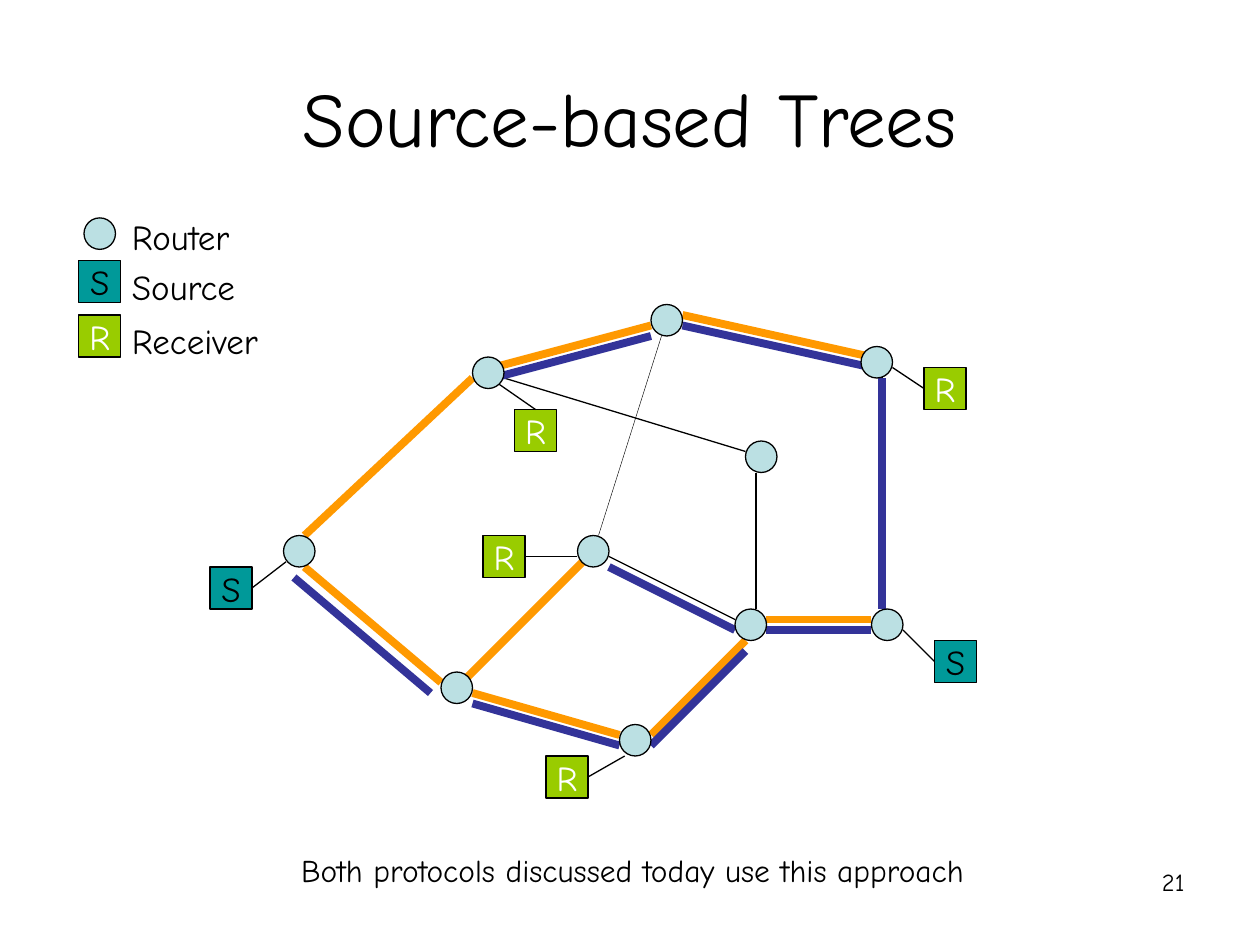
"""Build the Source-based Trees slide with its router network and legend."""
from pptx import Presentation
from pptx.dml.color import RGBColor
from pptx.enum.shapes import MSO_CONNECTOR as Link, MSO_SHAPE as Shape
from pptx.enum.text import MSO_ANCHOR as Anchor, MSO_AUTO_SIZE as AutoSize, PP_ALIGN as Align
from pptx.oxml.ns import qn
from pptx.util import Cm, Pt

FONT = "Comic Neue"
COLORS = {"black": "000000", "white": "FFFFFF", "router": "BBE0E3", "source": "009999",
          "receiver": "99CC00", "orange": "FF9900", "blue": "333399"}
GRID = 2.54 / 12
ROUTER_SIZE, HOST_SIZE = 3, 4
TOP, LEFT, RIGHT = 0, 1, 3

HOST_STYLES = {"S": ("source", "black"), "R": ("receiver", "white")}
ROUTERS = [(62, 29), (71, 42), (27, 51), (42, 64), (55, 51), (45, 34),
           (82, 33), (83, 58), (70, 58), (59, 69), (8, 20.75)]
HOSTS = [("R", 49, 39, TOP, (47.25, 36.4)), ("R", 46, 51, RIGHT, (55, 53)),
         ("R", 52, 72, RIGHT, (59.5, 72)), ("R", 88, 35, LEFT, (85, 35)),
         ("S", 20, 54, RIGHT, (27.25, 53.5)), ("S", 89, 61, LEFT, (86, 60)),
         ("S", 7.5, 24.8, None, None), ("R", 7.5, 30, None, None)]
LINKS = [
    ("black", 0.25, [(84, 35, 84, 57), (57, 51, 63, 32)]),
    ("black", 0.75, [(58, 53, 70, 59), (72, 58, 72, 45), (48, 36, 71, 43)]),
    ("orange", 4.5, [(29, 51, 45, 36), (29, 54, 42, 65), (44, 65, 56, 53), (47, 35, 62, 31),
                     (45, 66, 59, 70), (62, 70, 71, 61), (73, 59, 83, 59), (65, 30, 83, 34)]),
    ("blue", 4.5, [(28, 55, 41, 66), (47, 36, 62, 32), (58, 54, 70, 60), (45, 67, 59, 71),
                   (62, 71, 71, 62), (73, 60, 83, 60), (65, 31, 83, 35), (84, 36, 84, 58)]),
]
TEXTS = [
    ("Source-based Trees", (1.27, 0.76, 22.86, 3.18),
     {"size": 44, "align": Align.CENTER, "anchor": Anchor.MIDDLE, "wrap": True}),
    ("21", (18.21, 17.35, 5.92, 1.32), {"size": 14, "align": Align.RIGHT, "wrap": True}),
    ("Router", (2.41, 4.22, 2.74, 1.09), {"grow": True}),
    ("Source", (2.41, 5.23, 2.82, 1.09), {"grow": True}),
    ("Receiver", (2.41, 6.32, 3.35, 1.09), {"grow": True}),
    ("Both protocols discussed today use this approach", (5.82, 17.04, 15.14, 1.02),
     {"size": 18, "grow": True}),
]


def rgb(name):
    return RGBColor.from_string(COLORS[name])


def on_grid(*units):
    return [Cm(unit * GRID) for unit in units]


def write(box, text, size=20, color="black", align=Align.LEFT, anchor=Anchor.TOP,
          wrap=False, grow=False):
    frame = box.text_frame
    frame.word_wrap = wrap
    frame.auto_size = AutoSize.SHAPE_TO_FIT_TEXT if grow else AutoSize.NONE
    frame.vertical_anchor = anchor
    para = frame.paragraphs[0]
    para.alignment = align
    span = para.add_run()
    span.text = text
    span.font.name, span.font.size = FONT, Pt(size)
    span.font.color.rgb = rgb(color)


def add_node(slide, kind, left, top, size, fill):
    node = slide.shapes.add_shape(kind, *on_grid(left, top, size, size))
    node.shadow.inherit = False
    node.fill.solid()
    node.fill.fore_color.rgb = rgb(fill)
    node.line.color.rgb = rgb("black")
    node.line.width = Pt(0.75)
    return node


def add_link(slide, ends, color="black", width=0.75):
    link = slide.shapes.add_connector(Link.STRAIGHT, *on_grid(*ends))
    link.line.color.rgb = rgb(color)
    link.line.width = Pt(width)
    properties = link._element.spPr
    properties.append(properties.makeelement(qn("a:effectLst"), {}))
    return link


def add_host(slide, letter, left, top, side, router_end):
    fill, color = HOST_STYLES[letter]
    host = add_node(slide, Shape.RECTANGLE, left, top, HOST_SIZE, fill)
    write(host, letter, color=color, align=Align.CENTER, anchor=Anchor.MIDDLE)
    if router_end:
        add_link(slide, (left, top, *router_end)).begin_connect(host, side)


def main():
    deck = Presentation()
    deck.slide_width, deck.slide_height = Cm(25.4), Cm(19.05)
    slide = deck.slides.add_slide(deck.slide_layouts[6])
    for text, place, style in TEXTS:
        write(slide.shapes.add_textbox(*map(Cm, place)), text, **style)
    for host in HOSTS:
        add_host(slide, *host)
    for color, width, links in LINKS:
        for ends in links:
            add_link(slide, ends, color, width)
    for left, top in ROUTERS:
        add_node(slide, Shape.OVAL, left, top, ROUTER_SIZE, "router")
    deck.save("out.pptx")


if __name__ == "__main__":
    main()
